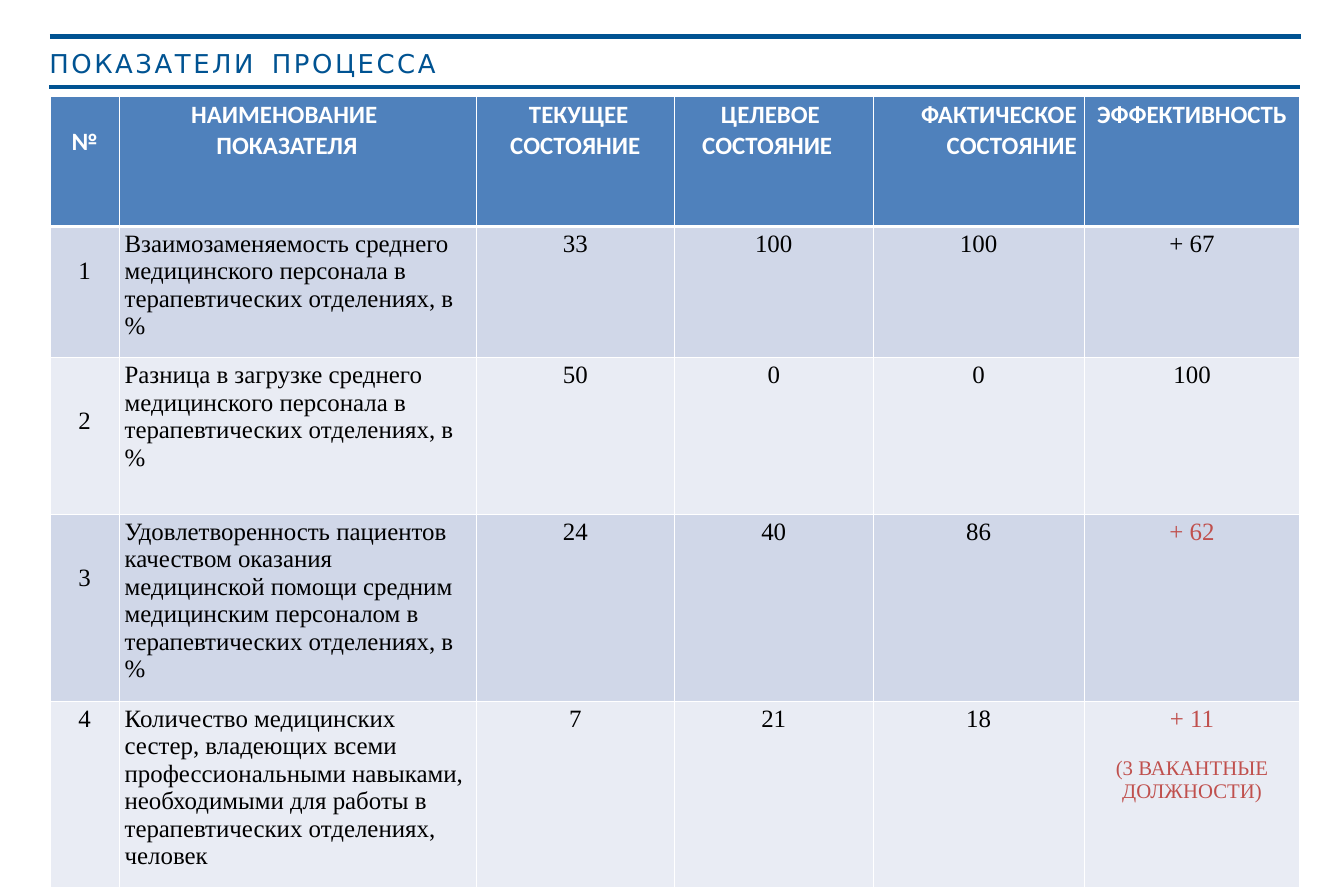
"""Build the slide with the table of process indicators."""
from dataclasses import dataclass

from lxml import etree
from pptx import Presentation, util as u
from pptx.dml.color import RGBColor
from pptx.enum import shapes, text
from pptx.oxml import ns

WHITE = RGBColor(0xFF, 0xFF, 0xFF)
BLACK = RGBColor(0x00, 0x00, 0x00)
NAVY = RGBColor(0x00, 0x53, 0x92)
HEADER_BLUE = RGBColor(0x4F, 0x81, 0xBC)
BAND_DARK = RGBColor(0xD0, 0xD7, 0xE8)
BAND_LIGHT = RGBColor(0xE9, 0xEC, 0xF4)
RED = RGBColor(0xC0, 0x50, 0x4D)

LEFT, CENTER, RIGHT = text.PP_ALIGN.LEFT, text.PP_ALIGN.CENTER, text.PP_ALIGN.RIGHT
COLUMN_WIDTHS = (2.36, 12.15, 6.73, 6.76, 7.18, 7.34)
ROW_HEIGHTS = (4.42, 4.47, 5.33, 6.35, 6.35)
THIN, THICK = 0.96, 3


@dataclass
class Heading:
    """Column heading with its indents in centimetres."""
    caption: str
    align: text.PP_ALIGN = LEFT
    margin: float = 0
    indent: float = 0
    top: float = 0.13


@dataclass
class Indicator:
    """Table row: name, values, and the look of number and effect."""
    name: str
    values: tuple[str, str, str]
    effect: str
    number_top: float
    effect_color: RGBColor = BLACK
    note: str = ""


HEADINGS = (
    Heading("№", CENTER, top=1.05),
    Heading("НАИМЕНОВАНИЕ ПОКАЗАТЕЛЯ", LEFT, 3.05, -0.86),
    Heading("ТЕКУЩЕЕ СОСТОЯНИЕ", LEFT, 0.89, 0.64),
    Heading("ЦЕЛЕВОЕ СОСТОЯНИЕ", LEFT, 0.69, 0.64),
    Heading("ФАКТИЧЕСКОЕ СОСТОЯНИЕ", RIGHT),
    Heading("ЭФФЕКТИВНОСТЬ", CENTER),
)
INDICATORS = (
    Indicator("Взаимозаменяемость среднего медицинского персонала в "
              "терапевтических отделениях, в %", ("33", "100", "100"), "+ 67", 1.06),
    Indicator("Разница в загрузке среднего медицинского персонала в "
              "терапевтических отделениях, в %", ("50", "0", "0"), "100", 1.7),
    Indicator("Удовлетворенность пациентов качеством оказания медицинской помощи "
              "средним медицинским персоналом в терапевтических отделениях, в %",
              ("24", "40", "86"), "+ 62", 1.7, RED),
    Indicator("Количество медицинских сестер, владеющих всеми профессиональными "
              "навыками, необходимыми для работы в терапевтических отделениях, человек",
              ("7", "21", "18"), "+ 11", 0.13, RED, "(3 ВАКАНТНЫЕ ДОЛЖНОСТИ)"),
)


def set_font(paragraph, name: str, size: float, color: RGBColor, bold: bool = False) -> None:
    """Set the font of a whole paragraph."""
    font = paragraph.font
    font.name, font.size, font.bold = name, u.Pt(size), bold
    font.color.rgb = color


def add_rule(slide, left: float, right: float, top: float) -> None:
    """Draw a horizontal rule."""
    rule = slide.shapes.add_connector(
        shapes.MSO_CONNECTOR.STRAIGHT, u.Cm(left), u.Cm(top), u.Cm(right), u.Cm(top))
    rule.line.color.rgb = NAVY
    rule.line.width = u.Pt(4.08)
    etree.SubElement(rule._element.spPr, ns.qn("a:effectLst"))


def add_title(slide) -> None:
    """Write the spaced title with a tab between its words."""
    box = slide.shapes.add_textbox(u.Cm(1.68), u.Cm(1.55), u.Cm(13.26), u.Cm(1.09))
    frame = box.text_frame
    frame.margin_left = frame.margin_right = frame.margin_bottom = 0
    frame.margin_top = u.Cm(0.06)
    paragraph = frame.paragraphs[0]
    tabs = etree.SubElement(paragraph._p.get_or_add_pPr(), ns.qn("a:tabLst"))
    etree.SubElement(tabs, ns.qn("a:tab"), pos=str(u.Cm(7.57)), algn="l")
    set_font(paragraph, "DejaVu Sans", 25, NAVY)
    run = paragraph.add_run()
    run.text = "ПОКАЗАТЕЛИ\tПРОЦЕССА"
    run._r.get_or_add_rPr().set("spc", "250")


def style_cell(cell, fill: RGBColor, top_line: float, bottom_line: float) -> None:
    """Fill a cell and give it white borders."""
    cell.fill.solid()
    cell.fill.fore_color.rgb = fill
    properties = cell._tc.get_or_add_tcPr()
    widths = {"lnL": THIN, "lnR": THIN, "lnT": top_line, "lnB": bottom_line}
    for position, (tag, width) in enumerate(widths.items()):
        border = etree.Element(ns.qn(f"a:{tag}"), w=str(u.Pt(width)))
        solid = etree.SubElement(border, ns.qn("a:solidFill"))
        etree.SubElement(solid, ns.qn("a:srgbClr"), val=str(WHITE))
        properties.insert(position, border)


def fill_heading(cell, heading: Heading) -> None:
    """Write one column heading."""
    style_cell(cell, HEADER_BLUE, THIN, THICK)
    cell.margin_top = u.Cm(heading.top)
    paragraph = cell.text_frame.paragraphs[0]
    paragraph.text = heading.caption
    paragraph.alignment = heading.align
    properties = paragraph._p.get_or_add_pPr()
    properties.set("marL", str(u.Cm(heading.margin)))
    properties.set("indent", str(u.Cm(heading.indent)))
    set_font(paragraph, "Calibri", 24, WHITE, True)


def write_value(paragraph, value: str, align: text.PP_ALIGN = CENTER,
                color: RGBColor = BLACK, size: float = 24) -> None:
    """Write one body paragraph."""
    paragraph.text = value
    paragraph.alignment = align
    set_font(paragraph, "Times New Roman", size, color)


def fill_indicator(table, row: int, indicator: Indicator) -> None:
    """Write one indicator row."""
    cells = [table.cell(row, column) for column in range(len(COLUMN_WIDTHS))]
    values = (str(row), indicator.name, *indicator.values, indicator.effect)
    for column, (cell, value) in enumerate(zip(cells, values)):
        style_cell(cell, BAND_DARK if row % 2 else BAND_LIGHT, THICK if row == 1 else THIN, THIN)
        write_value(cell.text_frame.paragraphs[0], value, LEFT if column == 1 else CENTER,
                    indicator.effect_color if column == 5 else BLACK)
    cells[0].margin_top = u.Cm(indicator.number_top)
    cells[1].margin_left = cells[1].margin_right = u.Cm(0.18)
    if indicator.note:
        note = cells[-1].text_frame.add_paragraph()
        note.space_before = u.Pt(23.6)
        write_value(note, indicator.note, color=indicator.effect_color, size=20)


def add_indicator_table(slide) -> None:
    """Build the table of indicators."""
    frame = slide.shapes.add_table(
        len(ROW_HEIGHTS), len(COLUMN_WIDTHS), u.Cm(1.7), u.Cm(3.28),
        u.Cm(sum(COLUMN_WIDTHS)), u.Cm(sum(ROW_HEIGHTS)))
    table = frame.table
    table.first_row = table.horz_banding = False
    for column, width in zip(table.columns, COLUMN_WIDTHS):
        column.width = u.Cm(width)
    for row, height in zip(table.rows, ROW_HEIGHTS):
        row.height = u.Cm(height)
    for column, heading in enumerate(HEADINGS):
        fill_heading(table.cell(0, column), heading)
    for row, indicator in enumerate(INDICATORS, start=1):
        fill_indicator(table, row, indicator)


def main() -> None:
    """Create and save the presentation."""
    presentation = Presentation()
    presentation.slide_width, presentation.slide_height = u.Cm(45.72), u.Cm(30.48)
    slide = presentation.slides.add_slide(presentation.slide_layouts[6])
    add_title(slide)
    add_rule(slide, 1.7, 44.27, 1.24)
    add_rule(slide, 1.68, 44.22, 2.97)
    add_indicator_table(slide)
    presentation.save("out.pptx")


if __name__ == "__main__":
    main()
